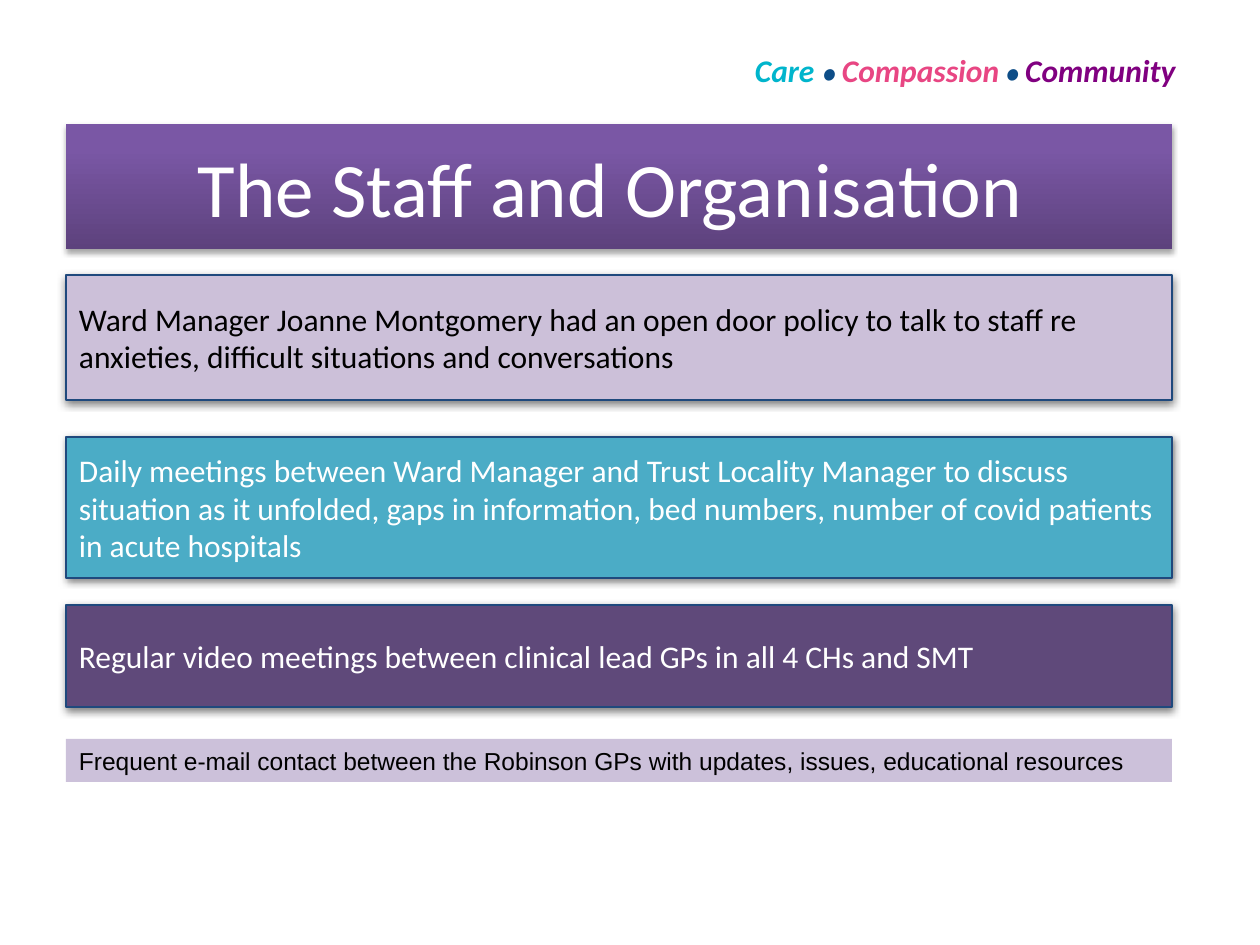
import copy
from dataclasses import dataclass

import pptx
import pptx.dml.color
import pptx.enum.shapes
import pptx.enum.text
import pptx.oxml
import pptx.oxml.ns
import pptx.util

SCALE = 914400 / 126
LEFT, WIDTH = 66, 1106
PAD = 13


@dataclass(frozen=True)
class Theme:
    white: str = "FFFFFF"
    black: str = "000000"
    edge: str = "1F497D"
    lilac: str = "CCC0D9"
    pale: str = "CCC1DA"
    teal: str = "4BACC6"
    plum: str = "5F497A"
    cyan: str = "00B5CC"
    navy: str = "0D4D87"
    pink: str = "E84683"
    purple: str = "800080"
    fade: tuple = ((0, "5D427D"), (0.8, "7A57A5"), (1, "7A56A7"))
    font: str = "Calibri"
    plain: str = "Arial"
    head: int = 44
    body: int = 18
    small: int = 14


THEME = Theme()


@dataclass(frozen=True)
class Run:
    text: str
    size: int
    color: str
    font: str = THEME.font
    strong: bool = False


@dataclass(frozen=True)
class Shade:
    alpha: int
    blur: float
    dist: float


@dataclass(frozen=True)
class Panel:
    top: int
    height: int
    fill: str
    run: Run
    pad: int = PAD
    raised: bool = True


def px(count: int) -> pptx.util.Emu:
    return pptx.util.Emu(round(count * SCALE))


def rgb(code: str) -> pptx.dml.color.RGBColor:
    return pptx.dml.color.RGBColor.from_string(code)


def place(shape, left: int, top: int, width: int, height: int) -> None:
    shape.left, shape.top = px(left), px(top)
    shape.width, shape.height = px(width), px(height)


def write(shape, runs: list[Run], align, pad: int, wrap: bool = True) -> None:
    frame = shape.text_frame
    frame.auto_size = pptx.enum.text.MSO_AUTO_SIZE.NONE
    frame.word_wrap = wrap
    frame.vertical_anchor = pptx.enum.text.MSO_ANCHOR.MIDDLE
    frame.margin_left = frame.margin_right = px(PAD)
    frame.margin_top = frame.margin_bottom = px(pad)
    para = frame.paragraphs[0]
    para.alignment = align
    for item in runs:
        run = para.add_run()
        run.text = item.text
        run.font.name = item.font
        run.font.size = pptx.util.Pt(item.size)
        run.font.bold = run.font.italic = item.strong
        run.font.color.rgb = rgb(item.color)


def cast(shape, shade: Shade) -> None:
    """Give the shape a soft black shadow that falls straight down."""
    shape.shadow.inherit = False
    effects = shape._element.spPr.find(pptx.oxml.ns.qn("a:effectLst"))
    effects.append(pptx.oxml.parse_xml(
        f'<a:outerShdw {pptx.oxml.ns.nsdecls("a")} dir="5400000" rotWithShape="0"'
        f' blurRad="{pptx.util.Pt(shade.blur)}" dist="{pptx.util.Pt(shade.dist)}">'
        f'<a:srgbClr val="{THEME.black}"><a:alpha val="{shade.alpha * 1000}"/>'
        '</a:srgbClr></a:outerShdw>'))


def blend(shape, stops: tuple) -> None:
    """Fill with a three-stop gradient running from bottom to top."""
    fill = shape.fill
    fill.gradient()
    fill.gradient_angle = 90
    first = shape._element.spPr.xpath(".//a:gs")[0]
    first.addnext(copy.deepcopy(first))
    for stop, (spot, color) in zip(fill.gradient_stops, stops):
        stop.position = spot
        stop.color.rgb = rgb(color)


def draw_motto(slide) -> None:
    dot = THEME.small, THEME.navy, THEME.font, True
    words = [
        Run("Care ", THEME.body, THEME.cyan, strong=True),
        Run("● ", *dot),
        Run("Compassion", THEME.body, THEME.pink, strong=True),
        Run(" ● ", *dot),
        Run("Community", THEME.body, THEME.purple, strong=True),
    ]
    box = slide.shapes.add_textbox(px(742), px(45), px(451), px(50))
    write(box, words, pptx.enum.text.PP_ALIGN.LEFT, 6, wrap=False)


def draw_title(slide) -> None:
    title = slide.shapes.title
    place(title, LEFT, 124, WIDTH, 125)
    blend(title, THEME.fade)
    cast(title, Shade(35, 3.1, 1.8))
    run = Run("The Staff and Organisation ", THEME.head, THEME.white)
    write(title, [run], pptx.enum.text.PP_ALIGN.CENTER, 6)


def draw_panel(slide, panel: Panel) -> None:
    shape = slide.shapes.add_shape(
        pptx.enum.shapes.MSO_SHAPE.RECTANGLE,
        px(LEFT), px(panel.top), px(WIDTH), px(panel.height))
    shape.fill.solid()
    shape.fill.fore_color.rgb = rgb(panel.fill)
    if panel.raised:
        shape.line.color.rgb = rgb(THEME.edge)
        shape.line.width = pptx.util.Pt(0.75)
        cast(shape, Shade(50, 4.5, 1.5))
    else:
        shape.line.fill.background()
        shape.shadow.inherit = False
    write(shape, [panel.run], pptx.enum.text.PP_ALIGN.LEFT, panel.pad)


PANELS = [
    Panel(275, 125, THEME.lilac, Run(
        "Ward Manager Joanne Montgomery had an open door policy to talk to "
        "staff re anxieties, difficult situations and conversations",
        THEME.body, THEME.black)),
    Panel(437, 141, THEME.teal, Run(
        "Daily meetings between Ward Manager and Trust Locality Manager to "
        "discuss situation as it unfolded, gaps in information, bed numbers, "
        "number of covid patients in acute hospitals",
        THEME.body, THEME.white)),
    Panel(605, 102, THEME.plum, Run(
        "Regular video meetings between clinical lead GPs in all 4 CHs and SMT",
        THEME.body, THEME.white)),
    Panel(739, 43, THEME.pale, Run(
        "Frequent e-mail contact between the Robinson GPs with updates, "
        "issues, educational resources",
        THEME.small, THEME.black, THEME.plain), pad=6, raised=False),
]


def main() -> None:
    deck = pptx.Presentation()
    deck.slide_width, deck.slide_height = px(1260), px(945)
    slide = deck.slides.add_slide(deck.slide_layouts[5])
    draw_motto(slide)
    draw_title(slide)
    for panel in PANELS:
        draw_panel(slide, panel)
    deck.save("out.pptx")


if __name__ == "__main__":
    main()
